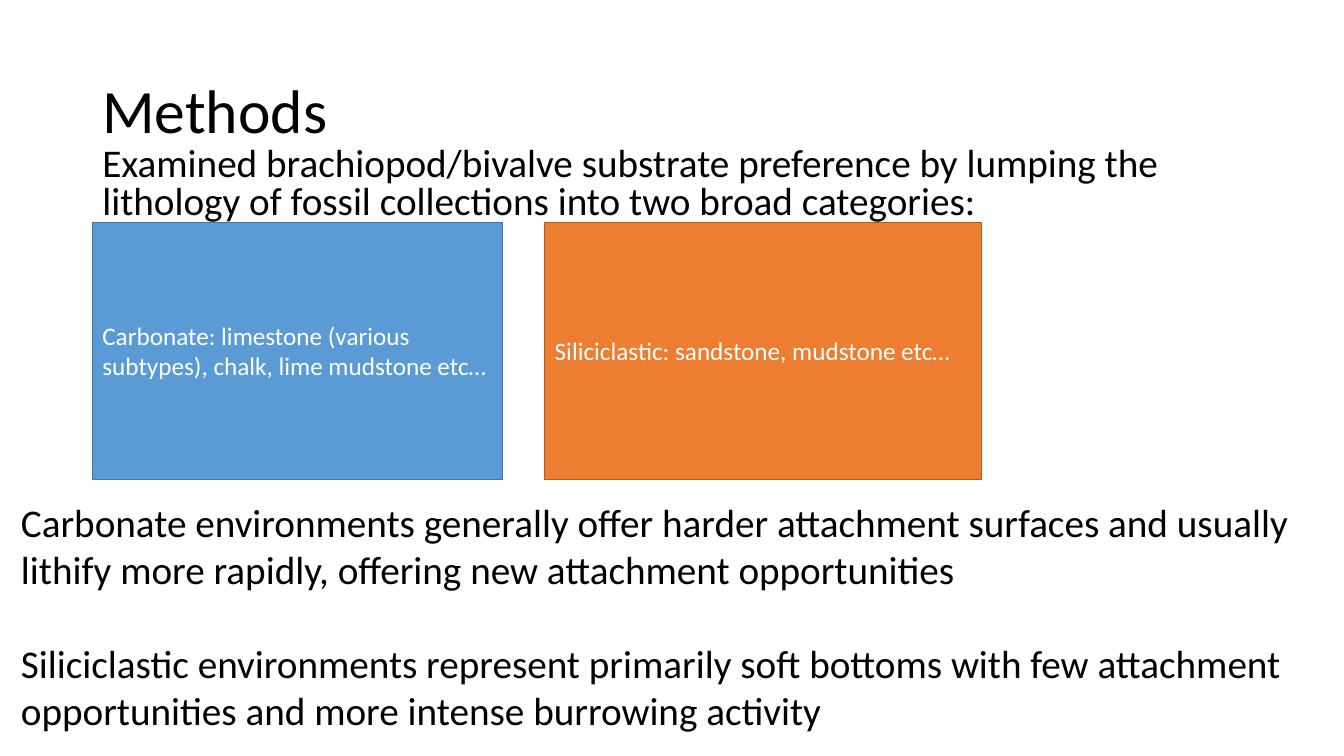
from pptx import Presentation
from pptx.dml.color import RGBColor
from pptx.enum.shapes import MSO_SHAPE as SHAPE
from pptx.enum.text import MSO_ANCHOR as ANCHOR, PP_ALIGN as ALIGN
from pptx.util import Cm, Pt

FONT = "Calibri"
COLORS = {
    "text": "000000",
    "box_text": "FFFFFF",
    "carbonate": "5B9BD5",
    "carbonate_line": "43739E",
    "siliciclastic": "ED7D31",
    "siliciclastic_line": "AF5C24",
}


def rgb(name):
    return RGBColor.from_string(COLORS[name])


def write(tf, lines, size, color="text", anchor=ANCHOR.TOP,
          spacing=1.0, before=0, gap=0):
    """Fill a frame; gap is the space in points between paragraphs."""
    tf.word_wrap = True
    tf.vertical_anchor = anchor
    for i, line in enumerate(lines):
        p = tf.add_paragraph() if i else tf.paragraphs[0]
        p.text = line
        p.alignment = ALIGN.LEFT
        p.line_spacing = spacing
        p.space_before = Pt(gap if i else before)
        p.font.name = FONT
        p.font.size = Pt(size)
        p.font.color.rgb = rgb(color)


def add_text(s, box, lines, size, **style):
    tb = s.shapes.add_textbox(*map(Cm, box))
    write(tb.text_frame, lines, size, **style)


def add_category(s, box, name, text):
    sp = s.shapes.add_shape(SHAPE.RECTANGLE, *map(Cm, box))
    sp.shadow.inherit = False
    sp.fill.solid()
    sp.fill.fore_color.rgb = rgb(name)
    sp.line.color.rgb = rgb(name + "_line")
    sp.line.width = Pt(1)
    write(sp.text_frame, [text], 18, color="box_text", anchor=ANCHOR.MIDDLE)


def add_heading(s, left, top, width):
    add_text(s, (left, top, width, 3.68), ["Methods"], 44,
             anchor=ANCHOR.MIDDLE, spacing=0.9)
    add_text(s, (left, top + 2.59, width, 2.24),
             ["Examined brachiopod/bivalve substrate preference by lumping the "
              "lithology of fossil collections into two broad categories:"],
             28, spacing=0.8, before=10)


def add_categories(s, left, top, height):
    add_category(s, (left, top, 10.34, height), "carbonate",
                 "Carbonate: limestone (various subtypes), chalk, "
                 "lime mudstone etc…")
    add_category(s, (left + 11.4, top, 11, height), "siliciclastic",
                 "Siliciclastic: sandstone, mudstone etc…")


def add_environments(s, box):
    add_text(s, box,
             ["Carbonate environments generally offer harder attachment "
              "surfaces and usually lithify more rapidly, offering new "
              "attachment opportunities",
              "Siliciclastic environments represent primarily soft bottoms "
              "with few attachment opportunities and more intense burrowing "
              "activity"],
             28, gap=34)


def main():
    prs = Presentation()
    prs.slide_width, prs.slide_height = Cm(33.87), Cm(19.05)
    s = prs.slides.add_slide(prs.slide_layouts[6])
    add_heading(s, 2.33, 1.01, 29.21)
    add_categories(s, 2.33, 5.6, 6.48)
    add_environments(s, (0.28, 12.42, 33.38, 6.25))
    prs.save("out.pptx")


if __name__ == "__main__":
    main()
